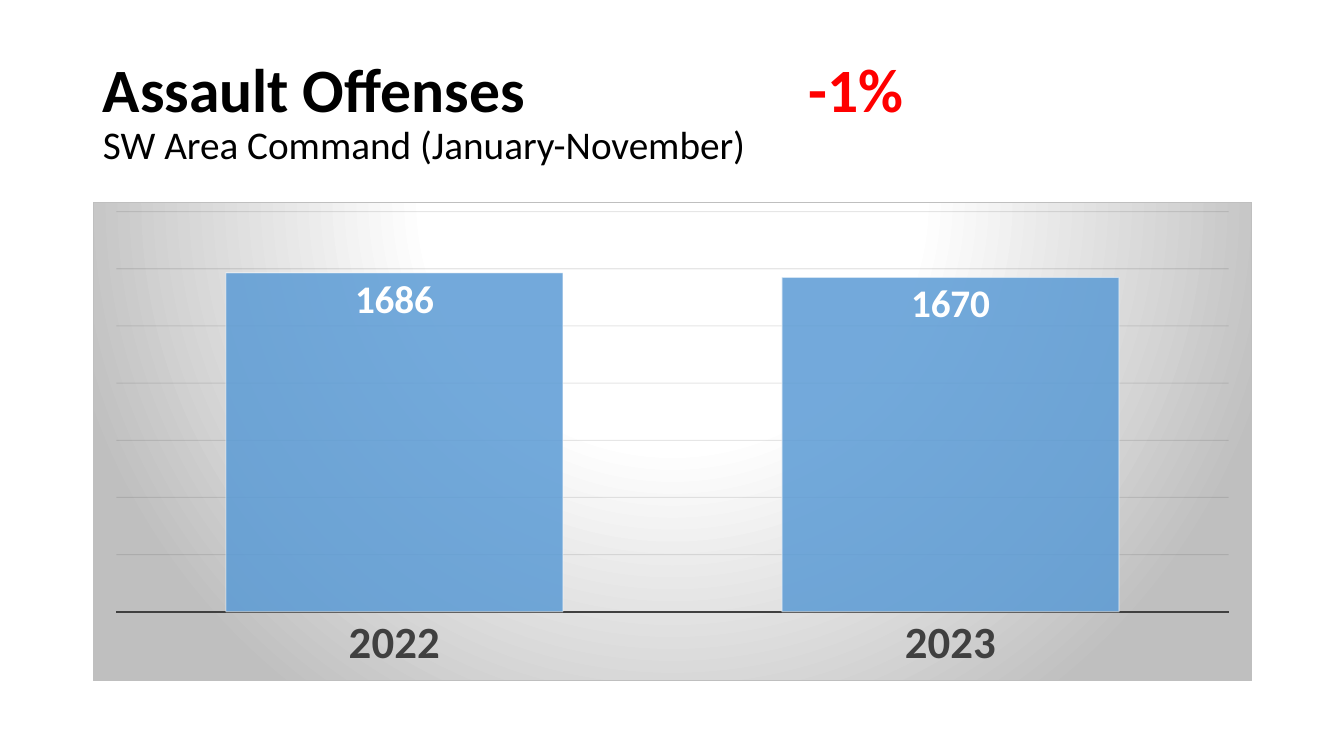
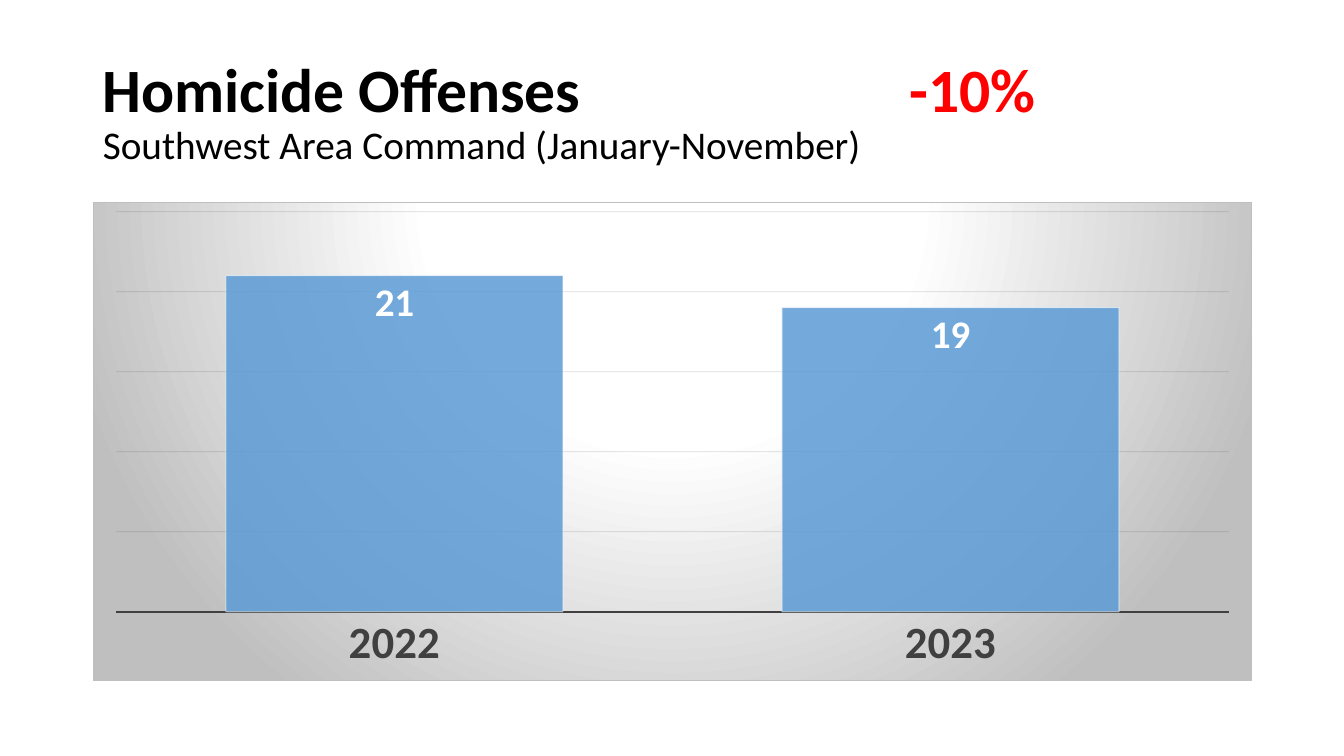
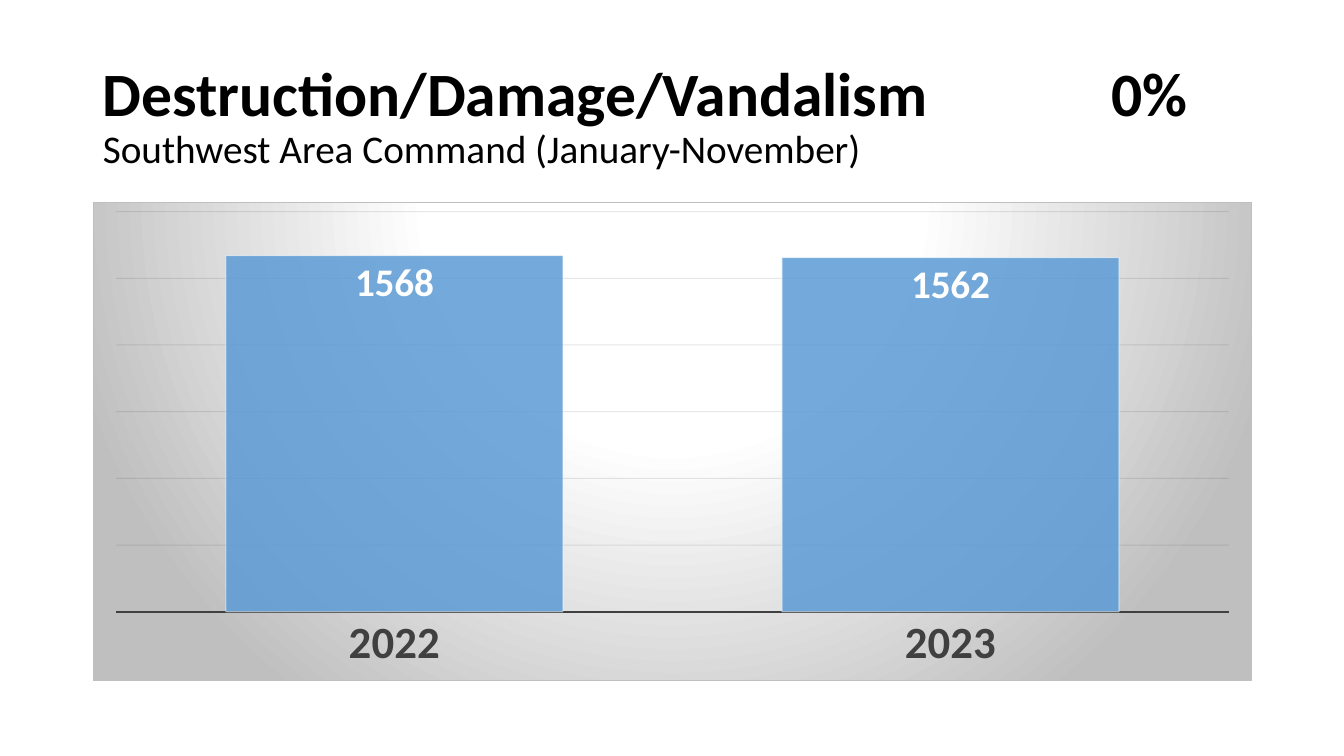
from dataclasses import dataclass

from lxml.etree import SubElement
from pptx import Presentation
from pptx.chart.chart import Chart
from pptx.chart.data import CategoryChartData
from pptx.dml.color import RGBColor
from pptx.dml.line import LineFormat
from pptx.enum.chart import XL_CHART_TYPE as ChartType
from pptx.enum.chart import XL_LABEL_POSITION as LabelPosition
from pptx.enum.chart import XL_TICK_MARK as TickMark
from pptx.enum.text import MSO_ANCHOR, MSO_AUTO_SIZE, PP_ALIGN
from pptx.oxml import parse_xml
from pptx.oxml.ns import nsdecls, qn
from pptx.shapes.autoshape import Shape
from pptx.slide import Slide
from pptx.text.text import Font
from pptx.util import Inches, Pt


@dataclass(frozen=True)
class Theme:
    font: str = "Calibri"
    black: str = "000000"
    white: str = "FFFFFF"
    red: str = "FF0000"
    bar: str = "5B9BD5"
    axis: str = "404040"
    grid: str = "0D0D0D"
    silver: str = "BFBFBF"
    heading_size: int = 44
    subtitle_size: int = 28
    category_size: int = 32
    label_size: int = 28
    chart_size: int = 10
    left: float = 0.92
    width: float = 11.5
    thin_line: float = 0.75
    axis_line: float = 1.5


@dataclass(frozen=True)
class Offense:
    heading: str
    area: str
    change: str
    change_color: str
    change_tab: float
    counts: tuple[int, int]
    axis_range: tuple[int, int]
    axis_step: int
    title_top: float = 0.4


THEME = Theme()
YEARS = ("2022", "2023")
OFFENSES = (
    Offense("Assault Offenses", "SW", "-1%", THEME.red, 7,
            (1686, 1670), (500, 1900), 200),
    Offense("Homicide Offenses", "Southwest", "-10%", THEME.red, 8,
            (21, 19), (0, 25), 5),
    Offense("Destruction/Damage/Vandalism", "Southwest", "0%", THEME.black, 10,
            (1568, 1562), (500, 1700), 200, title_top=0.44),
)


def style_font(font: Font, size: int, color: str, bold: bool = False) -> None:
    font.name = THEME.font
    font.size = Pt(size)
    font.bold = bold
    font.color.rgb = RGBColor.from_string(color)


def style_line(line: LineFormat, color: str, width: float) -> None:
    line.color.rgb = RGBColor.from_string(color)
    line.width = Pt(width)


def set_opacity(fill_parent, percent: int) -> None:
    """Make the solid colour inside an spPr or ln element translucent."""
    color = fill_parent.find(f"{qn('a:solidFill')}/{qn('a:srgbClr')}")
    SubElement(color, qn("a:alpha"), val=str(percent * 1000))


def fill_title(title: Shape, offense: Offense) -> None:
    title.left, title.top = Inches(THEME.left), Inches(offense.title_top)
    title.width, title.height = Inches(THEME.width), Inches(1.45)
    frame = title.text_frame
    frame.auto_size = MSO_AUTO_SIZE.NONE
    frame.vertical_anchor = MSO_ANCHOR.MIDDLE

    para = frame.paragraphs[0]
    para.alignment = PP_ALIGN.LEFT
    para.line_spacing = 0.9
    tabs = SubElement(para._p.get_or_add_pPr(), qn("a:tabLst"))
    SubElement(tabs, qn("a:tab"), pos=str(Inches(offense.change_tab)), algn="l")

    def add_span(text: str, size: int, color: str, bold: bool) -> None:
        span = para.add_run()
        span.text = text
        style_font(span.font, size, color, bold)

    add_span(f"{offense.heading}\t", THEME.heading_size, THEME.black, True)
    add_span(offense.change, THEME.heading_size, offense.change_color, True)
    para.add_line_break()
    add_span(f"{offense.area} Area Command (January-November)",
             THEME.subtitle_size, THEME.black, False)


def shade_background(chart: Chart) -> None:
    """Give the chart area a radial gradient and a thin border."""
    stops = ((0, THEME.white), (39, THEME.white), (100, THEME.silver))
    stop_xml = "".join(
        f'<a:gs pos="{position * 1000}"><a:srgbClr val="{color}"/></a:gs>'
        for position, color in stops
    )
    properties = parse_xml(
        f'<c:spPr {nsdecls("c", "a")}>'
        f'<a:gradFill><a:gsLst>{stop_xml}</a:gsLst><a:path path="circle">'
        '<a:fillToRect l="50000" t="-80000" r="50000" b="180000"/>'
        "</a:path></a:gradFill>"
        f'<a:ln w="{Pt(THEME.thin_line)}"><a:solidFill>'
        f'<a:srgbClr val="{THEME.silver}"/></a:solidFill></a:ln></c:spPr>'
    )
    chart.element.find(qn("c:chart")).addnext(properties)


def style_axes(chart: Chart, offense: Offense) -> None:
    years = chart.category_axis
    years.major_tick_mark = TickMark.NONE
    style_font(years.tick_labels.font, THEME.category_size, THEME.axis, True)
    style_line(years.format.line, THEME.axis, THEME.axis_line)

    counts = chart.value_axis
    counts.minimum_scale, counts.maximum_scale = offense.axis_range
    counts.major_unit = offense.axis_step
    counts.visible = False
    grid = counts.major_gridlines.format.line
    style_line(grid, THEME.grid, THEME.thin_line)
    set_opacity(grid._ln, 10)


def style_bars(chart: Chart) -> None:
    plot = chart.plots[0]
    plot.gap_width = 65
    plot.vary_by_categories = False
    series = plot.series[0]
    bars = series.format
    bars.fill.solid()
    bars.fill.fore_color.rgb = RGBColor.from_string(THEME.bar)
    set_opacity(series._element.spPr, 85)
    style_line(bars.line, THEME.white, THEME.thin_line)
    set_opacity(bars.line._ln, 50)

    labels = series.data_labels
    labels.show_value = True
    labels.position = LabelPosition.INSIDE_END
    style_font(labels.font, THEME.label_size, THEME.white, True)


def add_offense_chart(page: Slide, offense: Offense) -> None:
    data = CategoryChartData()
    data.categories = YEARS
    data.add_series("Series 1", offense.counts)
    chart = page.shapes.add_chart(
        ChartType.COLUMN_CLUSTERED, Inches(THEME.left), Inches(2),
        Inches(THEME.width), Inches(4.76), data,
    ).chart
    chart.has_title = False
    chart.has_legend = False
    style_font(chart.font, THEME.chart_size, THEME.black)
    shade_background(chart)
    style_axes(chart, offense)
    style_bars(chart)


def main() -> None:
    deck = Presentation()
    deck.slide_width, deck.slide_height = Inches(13.33), Inches(7.5)
    title_only = deck.slide_layouts.get_by_name("Title Only")
    for offense in OFFENSES:
        page = deck.slides.add_slide(title_only)
        fill_title(page.shapes.title, offense)
        add_offense_chart(page, offense)
    deck.save("out.pptx")


if __name__ == "__main__":
    main()
